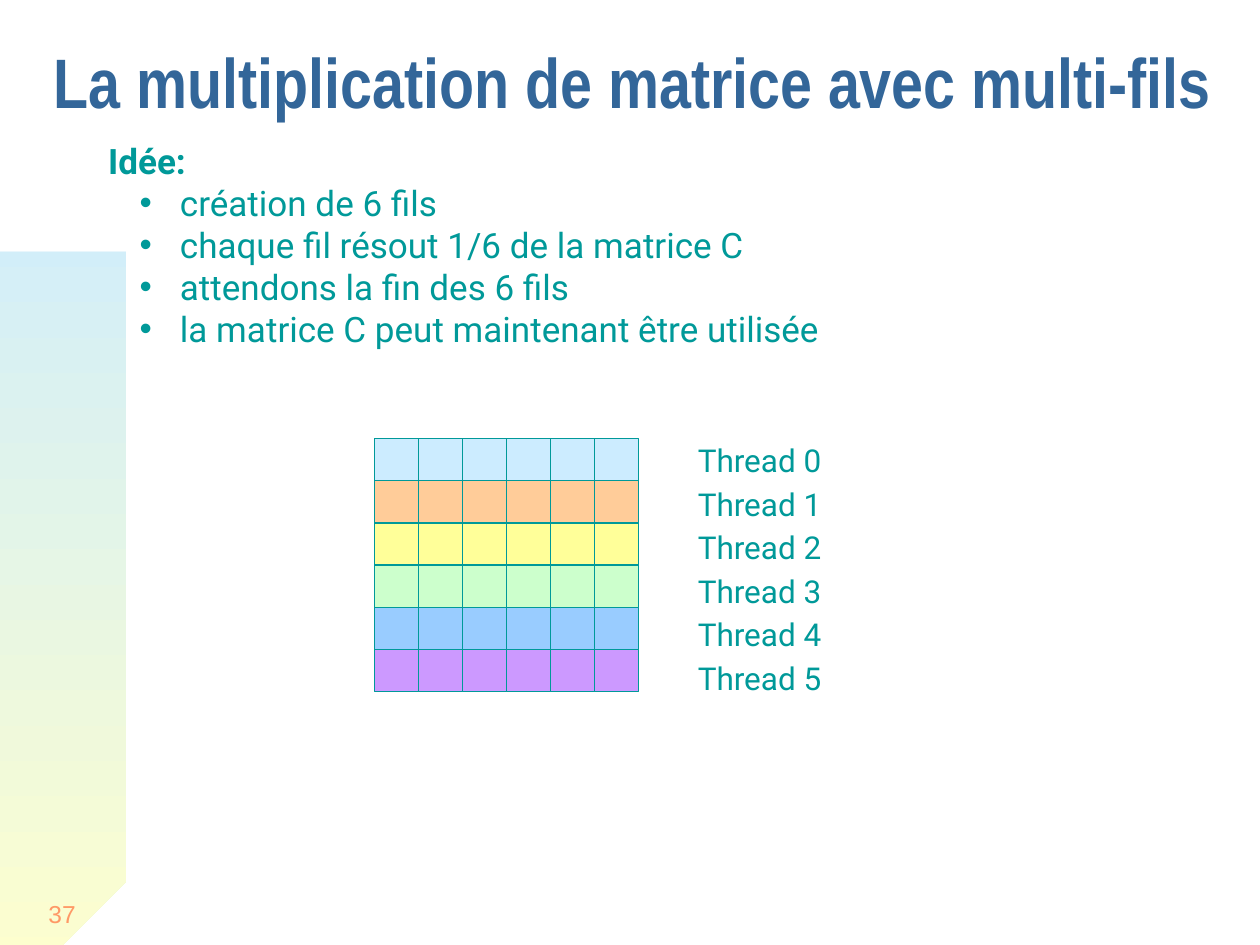
import math

from lxml import etree
from pptx import Presentation, util as u
from pptx.dml.color import RGBColor
from pptx.enum import shapes, text
from pptx.oxml.ns import qn

WIDTH, HEIGHT = 10, 7.5
TEAL = RGBColor(0x00, 0x99, 0x99)
NAVY = RGBColor(0x33, 0x66, 0x99)
ORANGE = RGBColor(0xFF, 0x99, 0x66)
SKY = RGBColor(0xCC, 0xEC, 0xFF)
CREAM = RGBColor(0xFF, 0xFF, 0xCC)
ROW_COLORS = [
    SKY,
    RGBColor(0xFF, 0xCC, 0x99),
    RGBColor(0xFF, 0xFF, 0x99),
    RGBColor(0xCC, 0xFF, 0xCC),
    RGBColor(0x99, 0xCC, 0xFF),
    RGBColor(0xCC, 0x99, 0xFF),
]
COLUMNS = 6
GRID_LEFT, GRID_TOP, GRID_WIDTH, GRID_HEIGHT = 2.97, 3.48, 2.1, 2.01
IDEAS = [
    "création de 6 fils",
    "chaque fil résout 1/6 de la matrice C",
    "attendons la fin des 6 fils",
    "la matrice C peut maintenant être utilisée",
]


def add_side_curve(slide, radius_x=1.12, radius_y=6.58, steps=60):
    """Quarter ellipse centred on the bottom left corner of the slide."""
    angles = [math.pi / 2 * step / steps for step in range(steps + 1)]
    points = [(radius_x * math.sin(angle), HEIGHT - radius_y * math.cos(angle))
              for angle in angles]
    builder = slide.shapes.build_freeform(*points[0], scale=u.Inches(1))
    builder.add_line_segments(points[1:] + [(0, HEIGHT)], close=True)
    curve = builder.convert_to_shape()
    curve.shadow.inherit = False
    curve.line.fill.background()
    curve.fill.gradient()
    curve.fill.gradient_angle = 270
    for stop, color in zip(curve.fill.gradient_stops, (SKY, CREAM)):
        stop.color.rgb = color


def add_text_frame(parent, left, top, width, height,
                   anchor=text.MSO_ANCHOR.TOP, wrap=True):
    box = parent.shapes.add_textbox(*map(u.Inches, (left, top, width, height)))
    frame = box.text_frame
    frame.word_wrap = wrap
    frame.vertical_anchor = anchor
    return frame


def add_paragraph(frame, words, size, font, color, bold=False, spacing=None):
    """Fill the empty first paragraph, or append a new one."""
    paragraph = frame.paragraphs[0]
    if paragraph.runs:
        paragraph = frame.add_paragraph()
    paragraph.line_spacing = spacing
    run = paragraph.add_run()
    run.text = words
    run.font.size = u.Pt(size)
    run.font.name = font
    run.font.bold = bold
    run.font.color.rgb = color
    return paragraph


def add_bullet(paragraph, margin=0.57, hanging=0.32):
    paragraph.level = 1
    properties = paragraph._p.get_or_add_pPr()
    properties.set("marL", str(u.Inches(margin)))
    properties.set("indent", str(-u.Inches(hanging)))
    etree.SubElement(properties, qn("a:buFont"), typeface="Arial")
    etree.SubElement(properties, qn("a:buChar"), char="•")


def add_matrix(group):
    cell_width = GRID_WIDTH / COLUMNS
    cell_height = GRID_HEIGHT / len(ROW_COLORS)
    for row, color in enumerate(ROW_COLORS):
        for column in range(COLUMNS):
            cell = group.shapes.add_shape(
                shapes.MSO_SHAPE.RECTANGLE,
                u.Inches(GRID_LEFT + column * cell_width),
                u.Inches(GRID_TOP + row * cell_height),
                u.Inches(cell_width), u.Inches(cell_height))
            cell.shadow.inherit = False
            cell.fill.solid()
            cell.fill.fore_color.rgb = color
            cell.line.color.rgb = TEAL
            cell.line.width = u.Pt(0.75)


def main():
    presentation = Presentation()
    presentation.slide_width = u.Inches(WIDTH)
    presentation.slide_height = u.Inches(HEIGHT)
    slide = presentation.slides.add_slide(presentation.slide_layouts[6])

    add_side_curve(slide)

    middle = text.MSO_ANCHOR.MIDDLE
    number = add_text_frame(slide, 0, 7, 0.7, 0.5, middle)
    paragraph = add_paragraph(number, "37", 14, "Arial", ORANGE)
    paragraph.alignment = text.PP_ALIGN.RIGHT

    title = add_text_frame(slide, 0.33, 0.2, 9.42, 1.05, middle)
    add_paragraph(title, "La multiplication de matrice avec multi-fils",
                  40, "Arial Narrow", NAVY, bold=True, spacing=0.7)

    body = add_text_frame(slide, 0.76, 1.06, 7.85, 1.77)
    add_paragraph(body, "Idée:", 20, "Roboto", TEAL, bold=True)
    for idea in IDEAS:
        add_bullet(add_paragraph(body, idea, 20, "Roboto", TEAL))

    diagram = slide.shapes.add_group_shape()
    add_matrix(diagram)
    labels = add_text_frame(diagram, 5.44, 3.41, 1.2, 2.17, wrap=False)
    for row in range(len(ROW_COLORS)):
        add_paragraph(labels, f"Thread {row}", 18, "Roboto", TEAL, spacing=1.15)

    presentation.save("out.pptx")


if __name__ == "__main__":
    main()
